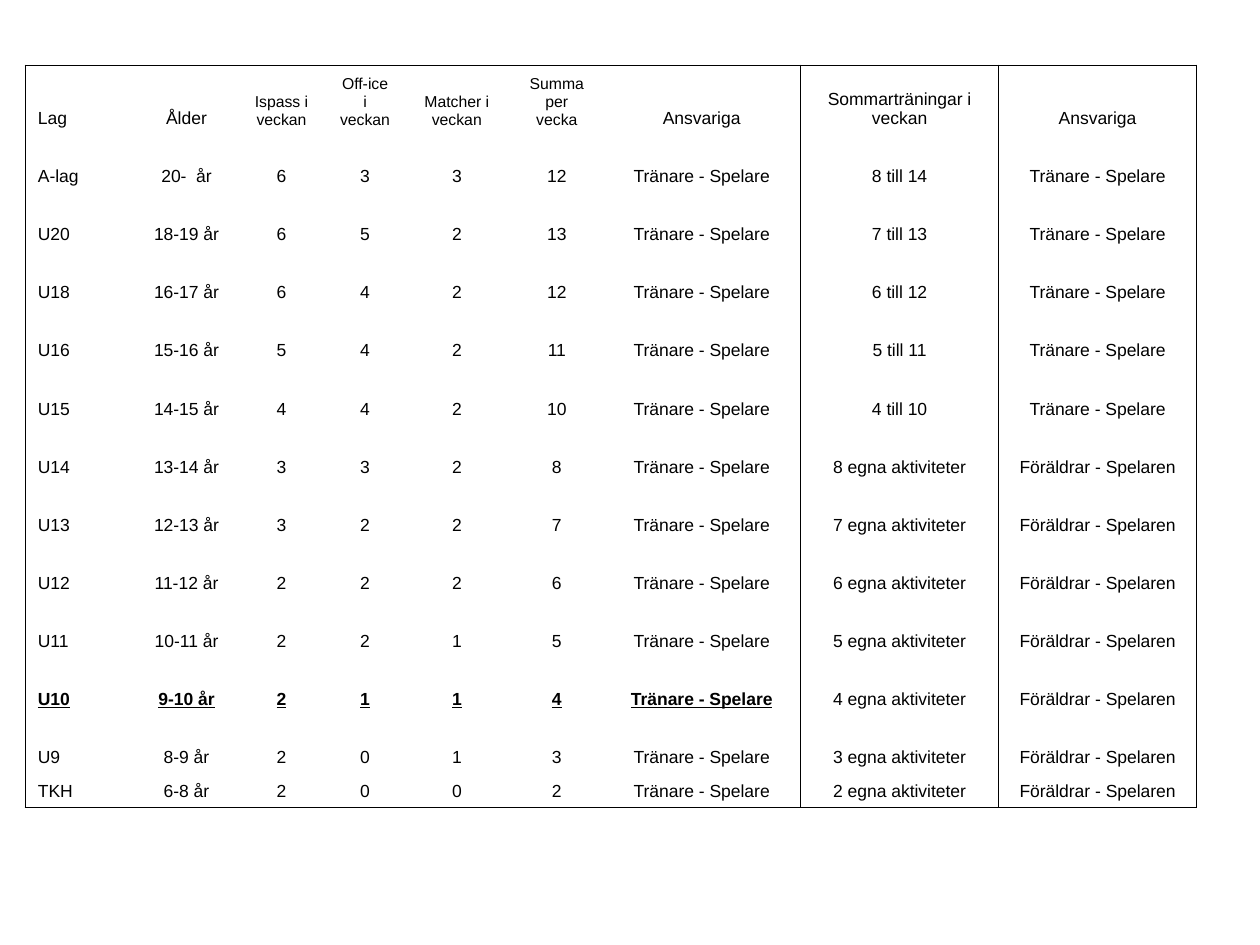
"""Build a slide with a table of weekly training sessions for each team."""
from dataclasses import dataclass

from lxml.etree import SubElement
from pptx import Presentation
from pptx.dml.color import RGBColor
from pptx.enum.text import MSO_ANCHOR, PP_ALIGN
from pptx.oxml.ns import qn
from pptx.util import Cm, Pt


@dataclass(frozen=True)
class Theme:
    font: str = "Arial"
    ink: str = "000000"
    body_size: int = 10
    small_size: int = 9
    border: int = 1
    table_style: str = "{2D5ABB26-0587-4C30-8999-92F81FD0307C}"


THEME = Theme()
COACH = "Tränare - Spelare"
PARENT = "Föräldrar - Spelaren"
HEADERS = [
    "Lag", "Ålder", "Ispass i veckan", "Off-ice i veckan", "Matcher i veckan",
    "Summa per vecka", "Ansvariga", "Sommarträningar i veckan", "Ansvariga",
]
TEAMS = [
    ("A-lag", "20-  år", 6, 3, 3, 12, "8 till 14", COACH),
    ("U20", "18-19 år", 6, 5, 2, 13, "7 till 13", COACH),
    ("U18", "16-17 år", 6, 4, 2, 12, "6 till 12", COACH),
    ("U16", "15-16 år", 5, 4, 2, 11, "5 till 11", COACH),
    ("U15", "14-15 år", 4, 4, 2, 10, "4 till 10", COACH),
    ("U14", "13-14 år", 3, 3, 2, 8, "8 egna aktiviteter", PARENT),
    ("U13", "12-13 år", 3, 2, 2, 7, "7 egna aktiviteter", PARENT),
    ("U12", "11-12 år", 2, 2, 2, 6, "6 egna aktiviteter", PARENT),
    ("U11", "10-11 år", 2, 2, 1, 5, "5 egna aktiviteter", PARENT),
    ("U10", "9-10 år", 2, 1, 1, 4, "4 egna aktiviteter", PARENT),
    ("U9", "8-9 år", 2, 0, 1, 3, "3 egna aktiviteter", PARENT),
    ("TKH", "6-8 år", 2, 0, 0, 2, "2 egna aktiviteter", PARENT),
]
HIGHLIGHTED_TEAM = "U10"
SUMMER_COLUMN = 7
SMALL_HEADERS = range(2, 6)
COLUMN_WIDTHS = [2.26, 1.98, 1.85, 1.52, 2.18, 1.85] + [3.99] * 3
ROW_HEIGHTS = [1.4] + [1.17] * (len(TEAMS) - 1) + [0.69]
LEFT, TOP = 0.51, 1.32


def add_borders(cell, sides):
    properties = cell._tc.get_or_add_tcPr()
    for side in sides:
        line = SubElement(properties, qn(f"a:ln{side}"), w=str(Pt(THEME.border)))
        fill = SubElement(line, qn("a:solidFill"))
        SubElement(fill, qn("a:srgbClr"), val=THEME.ink)


def border_sides(row, column):
    last_row, last_column = len(TEAMS), len(HEADERS) - 1
    edges = {
        "L": column in (0, SUMMER_COLUMN),
        "R": column in (SUMMER_COLUMN - 1, last_column),
        "T": row == 0,
        "B": row == last_row,
    }
    return [side for side, drawn in edges.items() if drawn]


def fill_cell(cell, text, size, centred, emphasised):
    cell.vertical_anchor = MSO_ANCHOR.BOTTOM
    paragraph = cell.text_frame.paragraphs[0]
    paragraph.alignment = PP_ALIGN.CENTER if centred else PP_ALIGN.LEFT
    run = paragraph.add_run()
    run.text = str(text)
    run.font.name = THEME.font
    run.font.size = Pt(size)
    run.font.color.rgb = RGBColor.from_string(THEME.ink)
    run.font.bold = emphasised
    run.font.underline = emphasised


def add_training_table(slide):
    rows = [HEADERS] + [[*team[:6], COACH, *team[6:]] for team in TEAMS]
    frame = slide.shapes.add_table(
        len(rows), len(HEADERS), Cm(LEFT), Cm(TOP),
        Cm(sum(COLUMN_WIDTHS)), Cm(sum(ROW_HEIGHTS)),
    )
    table = frame.table
    table.first_row = table.horz_banding = False
    table._tbl.tblPr.find(qn("a:tableStyleId")).text = THEME.table_style
    for column, width in zip(table.columns, COLUMN_WIDTHS):
        column.width = Cm(width)
    for row, height in zip(table.rows, ROW_HEIGHTS):
        row.height = Cm(height)
    for row_index, values in enumerate(rows):
        for column_index, text in enumerate(values):
            cell = table.cell(row_index, column_index)
            small = row_index == 0 and column_index in SMALL_HEADERS
            emphasised = values[0] == HIGHLIGHTED_TEAM and column_index < SUMMER_COLUMN
            size = THEME.small_size if small else THEME.body_size
            fill_cell(cell, text, size, column_index > 0, emphasised)
            add_borders(cell, border_sides(row_index, column_index))
            cell.fill.background()


def main():
    presentation = Presentation()
    presentation.slide_width, presentation.slide_height = Cm(25.4), Cm(19.05)
    slide = presentation.slides.add_slide(presentation.slide_layouts[6])
    add_training_table(slide)
    presentation.save("out.pptx")


if __name__ == "__main__":
    main()
